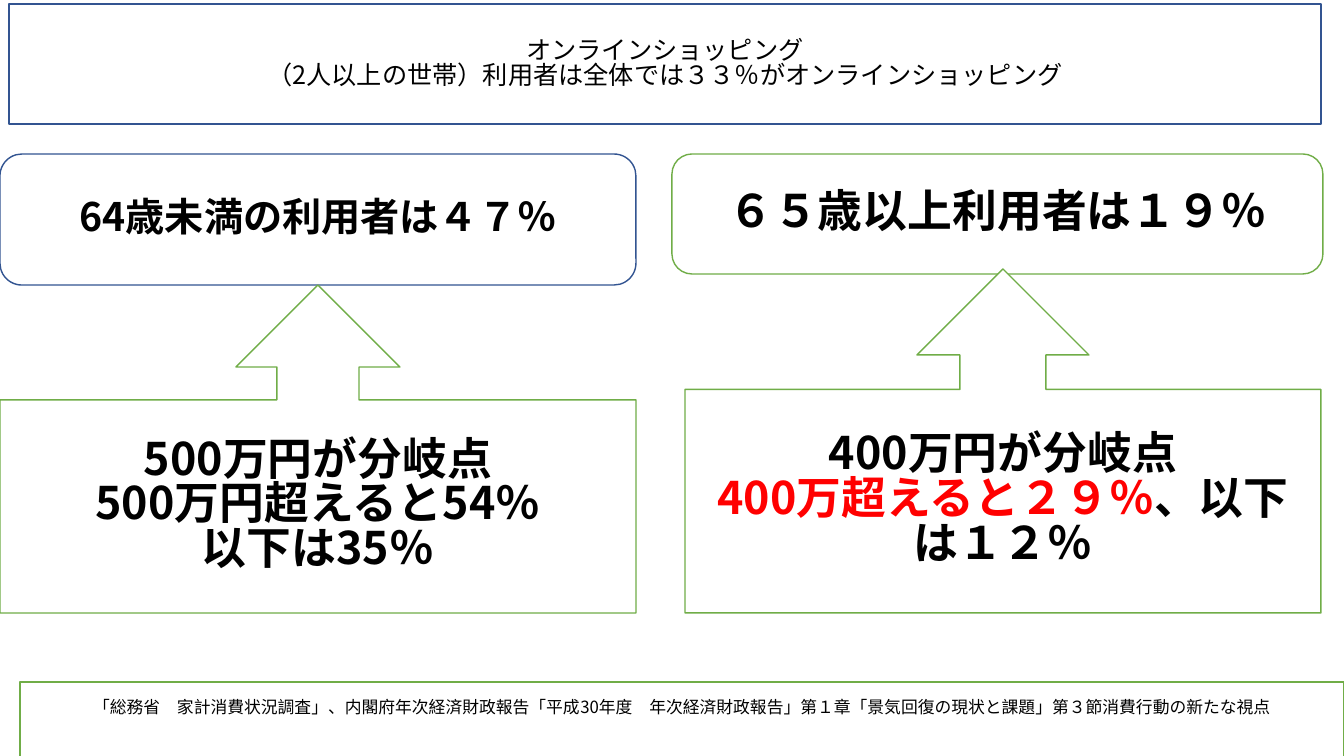
"""Build a slide on online shopping use by age group and income."""
from lxml.etree import SubElement
from pptx import Presentation
from pptx.dml.color import RGBColor
from pptx.enum.shapes import MSO_SHAPE
from pptx.enum.text import MSO_ANCHOR, MSO_AUTO_SIZE, PP_ALIGN
from pptx.oxml.ns import qn
from pptx.util import Emu, Pt

THEME = {
    "font": "Noto Sans CJK JP",
    "paper": RGBColor(255, 255, 255),
    "ink": RGBColor(0, 0, 0),
    "accent": RGBColor(255, 0, 0),
    "blue": RGBColor(0x32, 0x54, 0x91),
    "green": RGBColor(0x70, 0xAD, 0x47),
    "title": 18, "group": 28, "large": 32, "source": 12,
    "leading": 0.83,
}

TITLE = {
    "at": (9, 4, 1312, 120), "line": "blue", "size": "title", "bold": False,
    "text": [["オンラインショッピング"],
             ["（2人以上の世帯）利用者は全体では３３％がオンラインショッピング"]],
}
BOXES = [
    {"kind": MSO_SHAPE.ROUNDED_RECTANGLE, "at": (672, 154, 651, 120),
     "line": "green", "size": "large", "bold": True,
     "text": [["６５歳以上利用者は１９％"]]},
    {"kind": MSO_SHAPE.ROUNDED_RECTANGLE, "at": (0, 154, 636, 131),
     "line": "blue", "size": "group", "bold": True,
     "text": [["64歳未満の利用者は４７％"]]},
    {"kind": MSO_SHAPE.UP_ARROW_CALLOUT, "at": (0, 285, 636, 328),
     "line": "green", "size": "large", "bold": True,
     "text": [["500万円が分岐点"], ["500万円超えると54％"], ["以下は35％"]]},
    {"kind": MSO_SHAPE.UP_ARROW_CALLOUT, "at": (685, 269, 636, 344),
     "line": "green", "size": "large", "bold": True,
     "text": [["400万円が分岐点"],
              [("400万超えると２９％", "accent"), "、以下は１２％"]]},
    {"kind": MSO_SHAPE.RECTANGLE, "at": (20, 682, 1324, 83),
     "line": "green", "size": "source", "bold": False, "top": 18,
     "text": [["「総務省　家計消費状況調査」、内閣府年次経済財政報告「平成30年度　年次経済財政報告」"
               "第１章「景気回復の現状と課題」第３節消費行動の新たな視点"]]},
]


def px(length):
    return Emu(round(length * 914400 / 100.8))


def set_all(target, values):
    for name, value in values.items():
        setattr(target, name, value)


def add_span(para, piece, box):
    text, colour = piece if isinstance(piece, tuple) else (piece, "ink")
    span = para.add_run()
    span.text = text
    set_all(span.font, {"name": THEME["font"], "size": Pt(THEME[box["size"]]),
                        "bold": box["bold"]})
    span.font.color.rgb = THEME[colour]
    east_asian = SubElement(span.font._element, qn("a:ea"))
    east_asian.set("typeface", THEME["font"])


def dress(shape, box):
    set_all(shape, dict(zip(("left", "top", "width", "height"), map(px, box["at"]))))
    shape.fill.solid()
    shape.fill.fore_color.rgb = THEME["paper"]
    shape.line.color.rgb = THEME[box["line"]]
    shape.line.width = Pt(1)
    frame = shape.text_frame
    set_all(frame, {"word_wrap": True, "auto_size": MSO_AUTO_SIZE.NONE,
                    "vertical_anchor": MSO_ANCHOR.MIDDLE})
    if "top" in box:
        set_all(frame, {"vertical_anchor": MSO_ANCHOR.TOP, "margin_top": px(box["top"])})
    for index, pieces in enumerate(box["text"]):
        para = frame.add_paragraph() if index else frame.paragraphs[0]
        set_all(para, {"alignment": PP_ALIGN.CENTER, "line_spacing": THEME["leading"],
                       "space_before": Pt(0), "space_after": Pt(0)})
        for piece in pieces:
            add_span(para, piece, box)


def main():
    deck = Presentation()
    set_all(deck, {"slide_width": px(1344), "slide_height": px(756)})
    page = deck.slides.add_slide(deck.slide_layouts[5])
    dress(page.shapes.title, TITLE)
    for box in BOXES:
        shape = page.shapes.add_shape(box["kind"], *map(px, box["at"]))
        shape.shadow.inherit = False
        dress(shape, box)
    deck.save("out.pptx")


if __name__ == "__main__":
    main()
